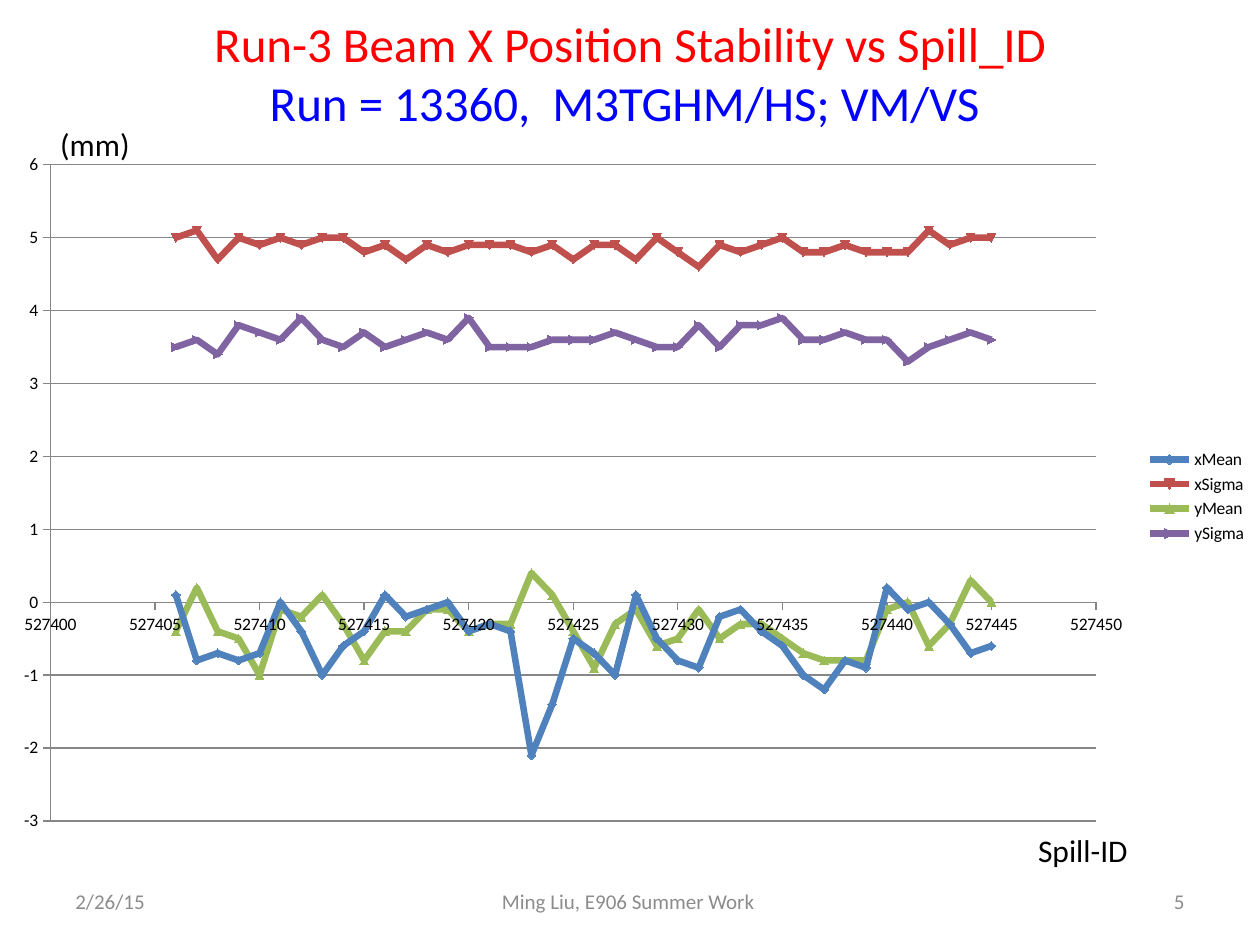
"""Builds the beam position stability slide with its scatter chart."""
from lxml import etree
from pptx import Presentation
from pptx.chart.data import XyChartData
from pptx.dml.color import RGBColor
from pptx.enum.chart import XL_CHART_TYPE, XL_LEGEND_POSITION, XL_TICK_MARK
from pptx.enum.text import MSO_ANCHOR, MSO_AUTO_SIZE, PP_ALIGN
from pptx.oxml.ns import qn
from pptx.util import Pt

SCATTER = XL_CHART_TYPE.XY_SCATTER_LINES
LEGEND_RIGHT = XL_LEGEND_POSITION.RIGHT
TICK_OUT = XL_TICK_MARK.OUTSIDE
MIDDLE, TOP = MSO_ANCHOR.MIDDLE, MSO_ANCHOR.TOP
FIXED, GROW = MSO_AUTO_SIZE.NONE, MSO_AUTO_SIZE.SHAPE_TO_FIT_TEXT
LEFT, CENTER, RIGHT = PP_ALIGN.LEFT, PP_ALIGN.CENTER, PP_ALIGN.RIGHT

PX = 9144
FONT = "Calibri"
COLORS = {
    "red": "FF0000", "blue": "0000FF", "black": "000000", "footer": "8C8C8C",
    "axis": "868686", "xMean": "4F81BD", "xSigma": "C0504D",
    "yMean": "9BBB59", "ySigma": "8064A2",
}
FIRST_SPILL = 527406
READINGS = {
    "xMean": [
        0.1, -0.8, -0.7, -0.8, -0.7, 0, -0.4, -1, -0.6, -0.4,
        0.1, -0.2, -0.1, 0, -0.4, -0.3, -0.4, -2.1, -1.4, -0.5,
        -0.7, -1, 0.1, -0.5, -0.8, -0.9, -0.2, -0.1, -0.4, -0.6,
        -1, -1.2, -0.8, -0.9, 0.2, -0.1, 0, -0.3, -0.7, -0.6],
    "xSigma": [
        5, 5.1, 4.7, 5, 4.9, 5, 4.9, 5, 5, 4.8,
        4.9, 4.7, 4.9, 4.8, 4.9, 4.9, 4.9, 4.8, 4.9, 4.7,
        4.9, 4.9, 4.7, 5, 4.8, 4.6, 4.9, 4.8, 4.9, 5,
        4.8, 4.8, 4.9, 4.8, 4.8, 4.8, 5.1, 4.9, 5, 5],
    "yMean": [
        -0.4, 0.2, -0.4, -0.5, -1, -0.1, -0.2, 0.1, -0.3, -0.8,
        -0.4, -0.4, -0.1, -0.1, -0.4, -0.3, -0.3, 0.4, 0.1, -0.4,
        -0.9, -0.3, -0.1, -0.6, -0.5, -0.1, -0.5, -0.3, -0.3, -0.5,
        -0.7, -0.8, -0.8, -0.8, -0.1, 0, -0.6, -0.3, 0.3, 0],
    "ySigma": [
        3.5, 3.6, 3.4, 3.8, 3.7, 3.6, 3.9, 3.6, 3.5, 3.7,
        3.5, 3.6, 3.7, 3.6, 3.9, 3.5, 3.5, 3.5, 3.6, 3.6,
        3.6, 3.7, 3.6, 3.5, 3.5, 3.8, 3.5, 3.8, 3.8, 3.9,
        3.6, 3.6, 3.7, 3.6, 3.6, 3.3, 3.5, 3.6, 3.7, 3.6],
}
PLOT_LAYOUT = {"x": 0.04, "y": 0.03, "w": 0.83, "h": 0.93}


class SlideBuilder:
    """Holds the current slide and draws styled elements on it."""

    def __init__(self, page):
        self.page = page

    def color(self, name):
        return RGBColor.from_string(COLORS[name])

    def style(self, font, size, color):
        font.name, font.size = FONT, Pt(size)
        font.color.rgb = self.color(color)

    def span(self, para, text, size, color):
        span = para.add_run()
        span.text = text
        self.style(span.font, size, color)

    def title(self, left, top, width, height, lines, size):
        box = self.page.shapes.title
        box.left, box.top, box.width, box.height = (
            value * PX for value in (left, top, width, height))
        frame = box.text_frame
        frame.auto_size, frame.vertical_anchor = FIXED, MIDDLE
        para = frame.paragraphs[0]
        para.alignment = CENTER
        for index, (text, color) in enumerate(lines):
            if index:
                para.add_line_break()
                line_break = para._p.find(qn("a:br"))
                etree.SubElement(line_break, qn("a:rPr"), sz=str(size * 100))
            self.span(para, text, size, color)

    def text(self, left, top, width, height, text, size, color,
             align=LEFT, anchor=TOP, wrap=False):
        box = self.page.shapes.add_textbox(
            left * PX, top * PX, width * PX, height * PX)
        frame = box.text_frame
        frame.word_wrap, frame.vertical_anchor = wrap, anchor
        frame.auto_size = FIXED if wrap else GROW
        para = frame.paragraphs[0]
        para.alignment = align
        self.span(para, text, size, color)

    def axis(self, axis, low, high, step, grid):
        axis.minimum_scale, axis.maximum_scale = low, high
        axis.major_unit = step
        axis.major_tick_mark = TICK_OUT
        axis.has_major_gridlines = grid
        axis.tick_labels.number_format = "General"
        axis.tick_labels.number_format_is_linked = False
        lines = [axis.format.line]
        if grid:
            lines.append(axis.major_gridlines.format.line)
        for line in lines:
            line.color.rgb = self.color("axis")
            line.width = Pt(0.75)

    def plot_area(self, chart):
        area = chart._chartSpace.find(".//" + qn("c:plotArea"))
        for old in area.findall(qn("c:layout")):
            area.remove(old)
        layout = etree.Element(qn("c:layout"))
        manual = etree.SubElement(layout, qn("c:manualLayout"))
        settings = {"layoutTarget": "inner", "xMode": "edge", "yMode": "edge"}
        for tag, value in {**settings, **PLOT_LAYOUT}.items():
            etree.SubElement(manual, qn("c:" + tag), val=str(value))
        area.insert(0, layout)

    def chart(self, left, top, width, height):
        data = XyChartData()
        for name, values in READINGS.items():
            series = data.add_series(name)
            for spill, value in enumerate(values, FIRST_SPILL):
                series.add_data_point(spill, value)
        chart = self.page.shapes.add_chart(
            SCATTER, left * PX, top * PX, width * PX, height * PX, data).chart
        chart.has_title = False
        self.style(chart.font, 10, "black")
        chart.has_legend = True
        chart.legend.position = LEGEND_RIGHT
        chart.legend.include_in_layout = False
        plot = chart.plots[0]
        plot.vary_by_categories = False
        for series in plot.series:
            series.smooth = False
            series.format.line.width = Pt(3.75)
            series.format.line.color.rgb = self.color(series.name)
            fill = series.marker.format.fill
            fill.solid()
            fill.fore_color.rgb = self.color(series.name)
        self.axis(chart.category_axis, 527400, 527450, 5, False)
        self.axis(chart.value_axis, -3, 6, 1, True)
        self.plot_area(chart)


def main():
    deck = Presentation()
    deck.slide_width, deck.slide_height = 1000 * PX, 750 * PX
    builder = SlideBuilder(deck.slides.add_slide(deck.slide_layouts[5]))
    builder.title(50, 1, 900, 113, [
        ("Run-3 Beam X Position Stability vs Spill_ID", "red"),
        ("Run = 13360,  M3TGHM/HS; VM/VS ", "blue")], 28)
    for left, width, text, align in (
            (50, 233, "2/26/15", LEFT),
            (342, 317, "Ming Liu, E906 Summer Work ", CENTER),
            (717, 233, "5", RIGHT)):
        builder.text(left, 695, width, 40, text, 12, "footer",
                     align, MIDDLE, True)
    builder.chart(0, 114, 1000, 560)
    builder.text(38, 94, 76, 40, "(mm)", 18, "black")
    builder.text(814, 655, 92, 40, "Spill-ID", 18, "black")
    deck.save("out.pptx")


if __name__ == "__main__":
    main()
